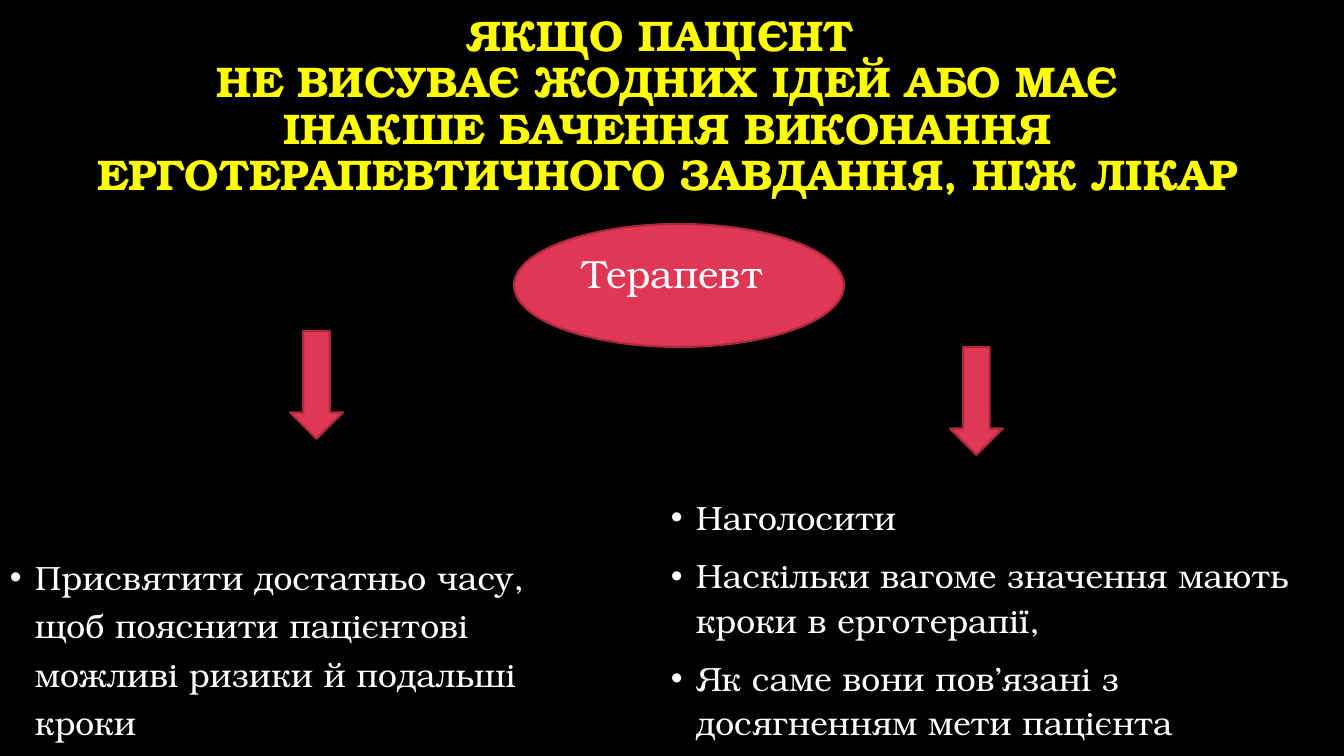
from lxml.etree import SubElement
from pptx import Presentation
from pptx.dml.color import RGBColor
from pptx.enum.shapes import MSO_SHAPE
from pptx.enum.text import MSO_ANCHOR, PP_ALIGN
from pptx.oxml.ns import qn
from pptx.util import Pt

PX = 914400 / 100.8
FONT = "TeX Gyre Bonum"
COLOURS = {"page": "000000", "title": "FFFF00", "text": "FFFFFF",
           "fill": "E03754", "edge": "A6293E"}
TITLE = ("ЯКЩО ПАЦІЄНТ \vНЕ ВИСУВАЄ ЖОДНИХ ІДЕЙ АБО МАЄ\v"
         "ІНАКШЕ БАЧЕННЯ ВИКОНАННЯ ЕРГОТЕРАПЕВТИЧНОГО ЗАВДАННЯ, НІЖ ЛІКАР")
EXPLAIN = ["Присвятити достатньо часу, щоб пояснити пацієнтові можливі ризики й подальші кроки"]
EMPHASISE = ["Наголосити",
             "Наскільки вагоме значення мають кроки в ерготерапії,",
             "Як саме вони пов’язані з досягненням мети пацієнта"]


def px(length):
    return round(length * PX)


def colour(name):
    return RGBColor.from_string(COLOURS[name])


def set_all(target, **values):
    for name, value in values.items():
        setattr(target, name, value)


def write(para, text, size, ink="text", bold=False):
    para.text = text
    for span in para.runs:
        set_all(span.font, name=FONT, size=Pt(size), bold=bold)
        span.font.color.rgb = colour(ink)


def add_title(page, box):
    title = page.shapes.title
    set_all(title, **dict(zip(("left", "top", "width", "height"), map(px, box))))
    set_all(title.text_frame, word_wrap=True, vertical_anchor=MSO_ANCHOR.MIDDLE)
    para = title.text_frame.paragraphs[0]
    set_all(para, alignment=PP_ALIGN.CENTER, line_spacing=0.9)
    write(para, TITLE, 30.6, "title", True)


def add_red_shape(page, kind, box):
    shape = page.shapes.add_shape(kind, *map(px, box))
    shape.shadow.inherit = False
    shape.fill.solid()
    shape.fill.fore_color.rgb = colour("fill")
    shape.line.color.rgb = colour("edge")
    shape.line.width = Pt(1.5)
    return shape


def add_therapist(page, box):
    """Ellipse whose label sits a little above the middle."""
    frame = add_red_shape(page, MSO_SHAPE.OVAL, box).text_frame
    set_all(frame, vertical_anchor=MSO_ANCHOR.MIDDLE, margin_bottom=px(31))
    para = frame.paragraphs[0]
    para.alignment = PP_ALIGN.CENTER
    write(para, "Терапевт ", 28)


def add_bullets(page, box, items, spacing):
    frame = page.shapes.add_textbox(*map(px, box)).text_frame
    frame.word_wrap = True
    for index, item in enumerate(items):
        para = frame.add_paragraph() if index else frame.paragraphs[0]
        set_all(para, line_spacing=spacing, space_before=Pt(10 if index else 0))
        write(para, item, 24)
        properties = para._p.get_or_add_pPr()
        properties.set("marL", str(px(25)))
        properties.set("indent", str(px(-25)))
        SubElement(properties, qn("a:buFont"), typeface="Arial")
        SubElement(properties, qn("a:buChar"), char="•")


def main():
    deck = Presentation()
    set_all(deck, slide_width=px(1344), slide_height=px(756))
    page = deck.slides.add_slide(deck.slide_layouts[5])
    page.background.fill.solid()
    page.background.fill.fore_color.rgb = colour("page")

    add_title(page, (0, 0, 1335, 214))
    add_bullets(page, (0, 544, 582, 190), EXPLAIN, 1.2)
    add_therapist(page, (514, 224, 330, 123))
    add_bullets(page, (661, 488, 689, 278), EMPHASISE, 1.1)
    for left, top in ((290, 331), (950, 347)):
        add_red_shape(page, MSO_SHAPE.DOWN_ARROW, (left, top, 53, 108))
    deck.save("out.pptx")


if __name__ == "__main__":
    main()
